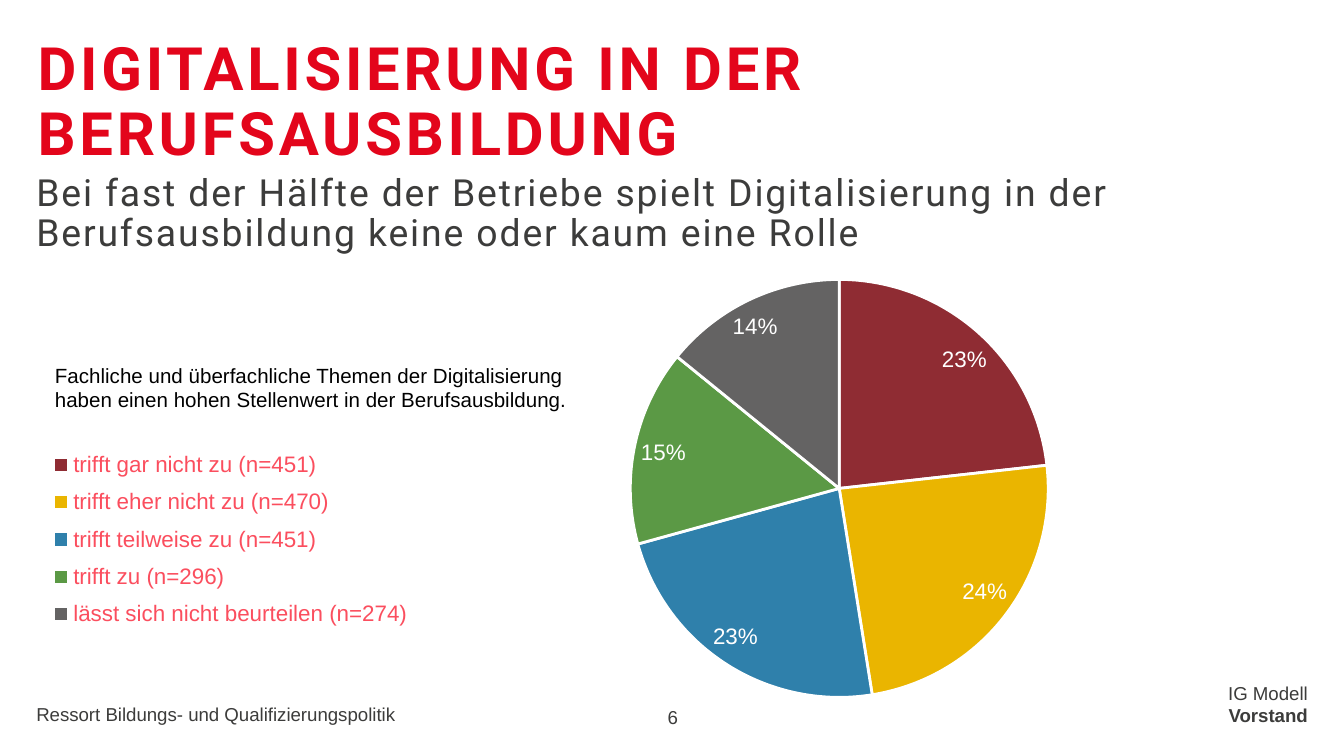
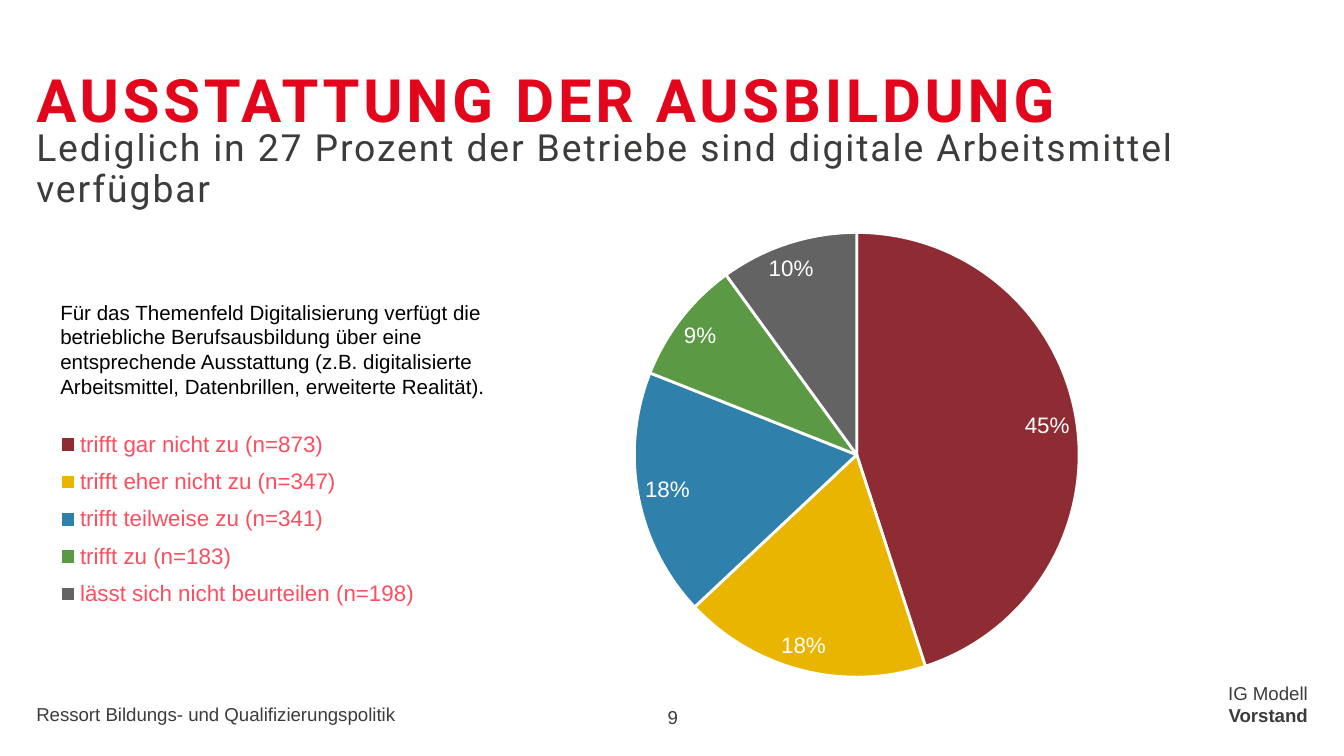
from lxml import etree
from pptx import Presentation
from pptx.chart import data as chart_data
from pptx.dml.color import RGBColor
from pptx.enum import chart as charts, text
from pptx.oxml import ns
from pptx.util import Pt

PX = 9144
RED, GREY, BLACK, WHITE, PINK = "E3051B", "3C3C3B", "000000", "FFFFFF", "FB4E5E"
SLICES = ["8F2C33", "EAB500", "2F80AB", "5B9945", "646363"]
ANSWERS = ["trifft gar nicht zu", "trifft eher nicht zu", "trifft teilweise zu",
           "trifft zu", "lässt sich nicht beurteilen"]
LEFT, ALIGN, ANCHOR = 27, text.PP_ALIGN, text.MSO_ANCHOR

PAGES = [
    dict(number=6, title="DIGITALISIERUNG IN DER BERUFSAUSBILDUNG",
         title_box=(28, 29, 669, 95),
         subtitle="Bei fast der Hälfte der Betriebe spielt Digitalisierung in der "
                  "Berufsausbildung keine oder kaum eine Rolle",
         subtitle_box=(LEFT, 124, 945, 71),
         question="Fachliche und überfachliche Themen der Digitalisierung haben "
                  "einen hohen Stellenwert in der Berufsausbildung.",
         question_box=(31, 265, 402, 47),
         counts=[451, 470, 451, 296, 274], shares=[0.23, 0.24, 0.23, 0.15, 0.14],
         chart_box=(31, 195, 905, 339), pie_box=(469, 208, 311, 311),
         legend_box=(37, 327, 270, 149)),
    dict(number=9, title="AUSSTATTUNG DER AUSBILDUNG",
         title_box=(LEFT, 53, 945, 50),
         subtitle="Lediglich in 27 Prozent der Betriebe sind digitale "
                  "Arbeitsmittel verfügbar",
         subtitle_box=(LEFT, 103, 945, 47),
         question="Für das Themenfeld Digitalisierung verfügt die betriebliche "
                  "Berufsausbildung über eine entsprechende Ausstattung (z.B. "
                  "digitalisierte Arbeitsmittel, Datenbrillen, erweiterte Realität).",
         question_box=(35, 218, 339, 84),
         counts=[873, 347, 341, 183, 198], shares=[0.45, 0.18, 0.18, 0.09, 0.10],
         chart_box=(24, 140, 945, 378), pie_box=(472, 173, 331, 331),
         legend_box=(42, 312, 270, 149)),
]


def px(box):
    """Turn a box in px into EMU."""
    return [n * PX for n in box]


def rgb(color):
    """Return the colour of a hex string."""
    return RGBColor.from_string(color)


def style(font, size, color, name="Arial", bold=False):
    """Set the look of a font."""
    font.size, font.name, font.bold = Pt(size), name, bold
    font.color.rgb = rgb(color)


def add_text(slide, box, words, size, color=GREY, name="Arial", bold=False,
             align=ALIGN.LEFT, anchor=ANCHOR.TOP, spacing=None, tracking=0, inset=0):
    """Add a text box and return its frame."""
    tf = slide.shapes.add_textbox(*px(box)).text_frame
    tf.word_wrap, tf.vertical_anchor = True, anchor
    tf.margin_left = tf.margin_right = inset * PX
    tf.margin_top = tf.margin_bottom = inset * PX // 2
    tf.text = words
    for p in tf.paragraphs:
        p.alignment = align
        if spacing:
            p.line_spacing = spacing
        for r in p.runs:
            style(r.font, size, color, name, bold)
            if tracking:
                r.font._element.set("spc", str(tracking * 100))
    return tf


def add_heading(slide, page):
    """Add the title and the subtitle."""
    add_text(slide, page["title_box"], page["title"], 32, RED, "Roboto", True,
             spacing=0.9, tracking=2)
    add_text(slide, page["subtitle_box"], page["subtitle"], 20, name="Roboto",
             anchor=ANCHOR.MIDDLE, spacing=0.9, tracking=1)


def add_footer(slide, number):
    """Add the department, the page number and the sender."""
    add_text(slide, (LEFT, 523, 389, 17), "Ressort Bildungs- und Qualifizierungspolitik",
             10, anchor=ANCHOR.BOTTOM)
    add_text(slide, (452, 512, 97, 30), str(number), 10, align=ALIGN.CENTER,
             anchor=ANCHOR.BOTTOM, spacing=0.9)
    tf = add_text(slide, (669, 507, 304, 34), "IG Modell\nVorstand", 10, align=ALIGN.RIGHT)
    tf.paragraphs[1].runs[0].font.bold = True


def place(parent, box, frame, inner=False):
    """Fix a chart part at a box inside the chart frame."""
    for old in parent.findall(ns.qn("c:layout")):
        parent.remove(old)
    layout = etree.Element(ns.qn("c:layout"))
    manual = etree.SubElement(layout, ns.qn("c:manualLayout"))
    x, y, w, h = box
    left, top, width, height = frame
    values = [("xMode", "edge"), ("yMode", "edge"), ("x", (x - left) / width),
              ("y", (y - top) / height), ("w", w / width), ("h", h / height)]
    if inner:
        values.insert(0, ("layoutTarget", "inner"))
    for tag, value in values:
        etree.SubElement(manual, ns.qn("c:" + tag)).set("val", str(value))
    parent.insert(0 if inner else 1, layout)


def add_pie(slide, page):
    """Add the pie of answers with its legend on the left."""
    data = chart_data.CategoryChartData(number_format="0%")
    data.categories = [f"{a} (n={n})" for a, n in zip(ANSWERS, page["counts"])]
    data.add_series("Series 1", page["shares"])
    frame = page["chart_box"]
    chart = slide.shapes.add_chart(charts.XL_CHART_TYPE.PIE, *px(frame), data).chart
    chart.has_title = False
    style(chart.font, 10, RED)
    chart.has_legend = True
    legend = chart.legend
    legend.position = charts.XL_LEGEND_POSITION.LEFT
    legend.include_in_layout = False
    style(legend.font, 12, PINK)
    plot = chart.plots[0]
    plot.vary_by_categories = True
    series = plot.series[0]
    for i, color in enumerate(SLICES):
        fmt = series.points[i].format
        fmt.fill.solid()
        fmt.fill.fore_color.rgb = rgb(color)
        fmt.line.color.rgb = rgb(WHITE)
        fmt.line.width = Pt(1.5)
    labels = series.data_labels
    labels.show_value, labels.show_percentage = True, False
    labels.number_format, labels.number_format_is_linked = "0%", False
    labels.position = charts.XL_LABEL_POSITION.BEST_FIT
    style(labels.font, 12, WHITE)
    place(legend._element, page["legend_box"], frame)
    place(chart._chartSpace.chart.plotArea, page["pie_box"], frame, inner=True)


def add_page(prs, page):
    """Add one survey slide."""
    slide = prs.slides.add_slide(prs.slide_layouts[6])
    add_footer(slide, page["number"])
    add_pie(slide, page)
    add_heading(slide, page)
    tf = add_text(slide, page["question_box"], page["question"], 11, BLACK, inset=10)
    tf.auto_size = text.MSO_AUTO_SIZE.SHAPE_TO_FIT_TEXT


def main():
    """Build and save the presentation."""
    prs = Presentation()
    prs.slide_width = 1000 * PX
    prs.slide_height = prs.slide_width * 9 // 16
    for page in PAGES:
        add_page(prs, page)
    prs.save("out.pptx")


if __name__ == "__main__":
    main()
